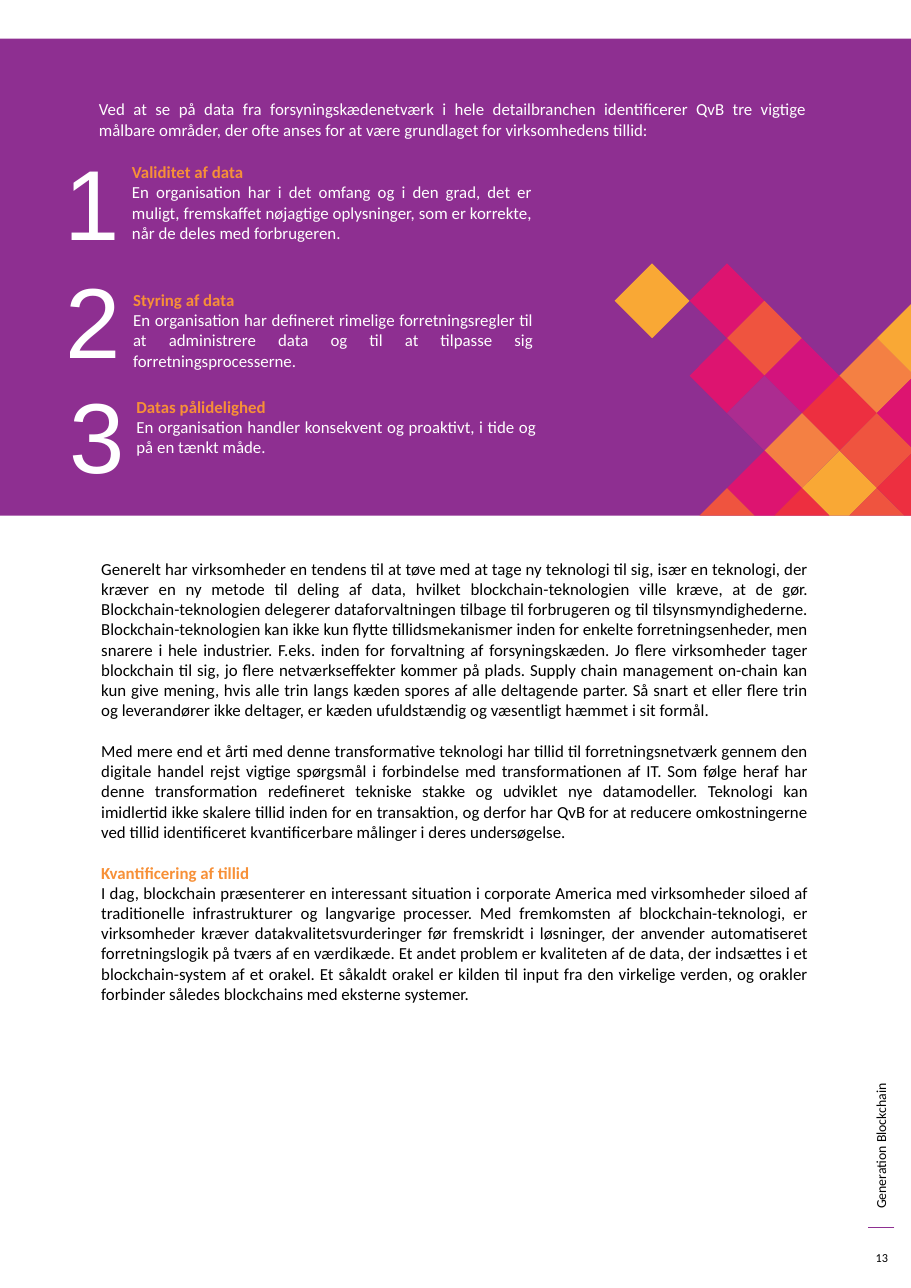
from lxml.etree import SubElement
from pptx import Presentation
from pptx.dml.color import RGBColor
from pptx.enum.shapes import MSO_CONNECTOR, MSO_SHAPE
from pptx.enum.text import MSO_ANCHOR, PP_ALIGN
from pptx.oxml.ns import qn
from pptx.util import Inches, Pt

WIDTH, HEIGHT = 8.27, 11.69
BAND_TOP, BAND_BOTTOM = 0.35, 4.68
PURPLE, ORANGE, WHITE, BLACK = "8E2F91", "F79037", "FFFFFF", "000000"

INTRO = "Ved at se på data fra forsyningskædenetværk i hele detailbranchen identificerer QvB tre vigtige målbare områder, der ofte anses for at være grundlaget for virksomhedens tillid:"

AREAS = [
    ("1", (0.49, 1.23), (1.1, 1.42), "Validitet af data",
     "En organisation har i det omfang og i den grad, det er muligt, fremskaffet nøjagtige oplysninger, som er korrekte, når de deles med forbrugeren."),
    ("2", (0.5, 2.3), (1.11, 2.58), "Styring af data",
     "En organisation har defineret rimelige forretningsregler til at administrere data og til at tilpasse sig forretningsprocesserne."),
    ("3", (0.53, 3.35), (1.14, 3.55), "Datas pålidelighed",
     "En organisation handler konsekvent og proaktivt, i tide og på en tænkt måde."),
]

TENDENCY = [
    "Generelt har virksomheder en tendens til at tøve med at tage ny teknologi til sig, især en teknologi, der kræver en ny metode til deling af data, hvilket blockchain-teknologien ville kræve, at de gør.",
    "Blockchain-teknologien delegerer dataforvaltningen tilbage til forbrugeren og til tilsynsmyndighederne.",
    "Blockchain-teknologien kan ikke kun flytte tillidsmekanismer inden for enkelte forretningsenheder, men snarere i hele industrier.",
    "F.eks. inden for forvaltning af forsyningskæden.",
    "Jo flere virksomheder tager blockchain til sig, jo flere netværkseffekter kommer på plads.",
    "Supply chain management on-chain kan kun give mening, hvis alle trin langs kæden spores af alle deltagende parter.",
    "Så snart et eller flere trin og leverandører ikke deltager, er kæden ufuldstændig og væsentligt hæmmet i sit formål.",
]
DECADE = "Med mere end et årti med denne transformative teknologi har tillid til forretningsnetværk gennem den digitale handel rejst vigtige spørgsmål i forbindelse med transformationen af IT. Som følge heraf har denne transformation redefineret tekniske stakke og udviklet nye datamodeller. Teknologi kan imidlertid ikke skalere tillid inden for en transaktion, og derfor har QvB for at reducere omkostningerne ved tillid identificeret kvantificerbare målinger i deres undersøgelse."
QUANTIFYING_TITLE = "Kvantificering af tillid"
QUANTIFYING = "I dag, blockchain præsenterer en interessant situation i corporate America med virksomheder siloed af traditionelle infrastrukturer og langvarige processer. Med fremkomsten af blockchain-teknologi, er virksomheder kræver datakvalitetsvurderinger før fremskridt i løsninger, der anvender automatiseret forretningslogik på tværs af en værdikæde. Et andet problem er kvaliteten af de data, der indsættes i et blockchain-system af et orakel. Et såkaldt orakel er kilden til input fra den virkelige verden, og orakler forbinder således blockchains med eksterne systemer."

DIAMOND_ORIGIN, DIAMOND_STEP = (5.92, 2.73), 0.34
DIAMONDS = [
    (0, 0, "F9A835"), (2, 0, "DD1470"), (3, 1, "EF543F"), (7, 1, "F9A835"),
    (2, 2, "DD1470"), (4, 2, "D3137D"), (6, 2, "F48043"), (3, 3, "AC2C90"),
    (5, 3, "ED2F40"), (7, 3, "DD1470"), (4, 4, "F48043"), (6, 4, "EF543F"),
    (3, 5, "DD1470"), (5, 5, "F9A835"), (7, 5, "ED2F40"), (2, 6, "EF543F"),
    (4, 6, "ED2F40"), (6, 6, "EF543F"),
]

BODY = {"size": Pt(11), "name": "Calibri", "bold": False}
HEADING = {**BODY, "bold": True}
NUMERAL = {"size": Pt(65), "name": "Arial"}
JUSTIFIED = {"alignment": PP_ALIGN.JUSTIFY}
SPACED = {**JUSTIFIED, "space_after": Pt(13.4)}


def color(value):
    return RGBColor.from_string(value)


def apply(target, formats):
    for name, value in formats.items():
        setattr(target, name, value)


def fill_plain(shape, value):
    shape.fill.solid()
    shape.fill.fore_color.rgb = color(value)
    shape.line.fill.background()
    shape.shadow.inherit = False


def add_text(slide, box, paragraphs, anchor=MSO_ANCHOR.TOP):
    shape = slide.shapes.add_textbox(*map(Inches, box))
    frame = shape.text_frame
    apply(frame, {"word_wrap": True, "vertical_anchor": anchor})
    for index, (text, font, value, layout) in enumerate(paragraphs):
        paragraph = frame.add_paragraph() if index else frame.paragraphs[0]
        apply(paragraph, layout)
        run = paragraph.add_run()
        run.text = text
        apply(run.font, font)
        run.font.color.rgb = color(value)
    return shape


def clip(points, axis, limit):
    kept = []
    for start, end in zip(points, points[1:] + points[:1]):
        if start[axis] <= limit:
            kept.append(start)
        if (start[axis] <= limit) != (end[axis] <= limit):
            share = (limit - start[axis]) / (end[axis] - start[axis])
            kept.append(tuple(a + share * (b - a) for a, b in zip(start, end)))
    return kept


def add_diamond(slide, column, row, value):
    x = DIAMOND_ORIGIN[0] + column * DIAMOND_STEP
    y = DIAMOND_ORIGIN[1] + row * DIAMOND_STEP
    corners = [(x, y - DIAMOND_STEP), (x + DIAMOND_STEP, y),
               (x, y + DIAMOND_STEP), (x - DIAMOND_STEP, y)]
    outline = clip(clip(corners, 0, WIDTH), 1, BAND_BOTTOM)
    points = [(Inches(a), Inches(b)) for a, b in outline]
    builder = slide.shapes.build_freeform(*points[0])
    builder.add_line_segments(points[1:], close=True)
    fill_plain(builder.convert_to_shape(), value)


def main():
    presentation = Presentation()
    apply(presentation, {"slide_width": Inches(WIDTH), "slide_height": Inches(HEIGHT)})
    slide = presentation.slides.add_slide(presentation.slide_layouts[6])

    band = slide.shapes.add_shape(MSO_SHAPE.RECTANGLE, 0, Inches(BAND_TOP),
                                  Inches(WIDTH), Inches(BAND_BOTTOM - BAND_TOP))
    fill_plain(band, PURPLE)
    for diamond in DIAMONDS:
        add_diamond(slide, *diamond)

    add_text(slide, (0.8, 0.85, 6.62, 0.5), [(INTRO, BODY, WHITE, JUSTIFIED)])
    for number, number_at, text_at, title, description in AREAS:
        add_text(slide, (*number_at, 0.72, 1.19), [(number, NUMERAL, WHITE, {})])
        add_text(slide, (*text_at, 3.83, 0.85), [
            (title, HEADING, ORANGE, JUSTIFIED),
            (description, BODY, WHITE, JUSTIFIED)])

    add_text(slide, (0.82, 5.02, 6.62, 5.83), [
        (" ".join(TENDENCY), BODY, BLACK, SPACED),
        (DECADE, BODY, BLACK, SPACED),
        (QUANTIFYING_TITLE, HEADING, ORANGE, JUSTIFIED),
        (QUANTIFYING, BODY, BLACK, JUSTIFIED)])

    side_title = add_text(slide, (6.26, 9.21, 3.47, 0.25), [
        ("Generation Blockchain", {**BODY, "size": Pt(9)}, BLACK, {})])
    side_title.rotation = 270
    rule = slide.shapes.add_connector(MSO_CONNECTOR.STRAIGHT, Inches(8.12),
                                      Inches(11.14), Inches(7.88), Inches(11.14))
    rule.line.color.rgb = color(PURPLE)
    rule.line.width = Pt(0.75)
    SubElement(rule.element.spPr, qn("a:effectLst"))
    add_text(slide, (7.8, 11.16, 0.41, 0.51), [
        ("13", {**BODY, "size": Pt(8)}, BLACK, {"alignment": PP_ALIGN.CENTER})],
        MSO_ANCHOR.MIDDLE)

    presentation.save("out.pptx")


if __name__ == "__main__":
    main()
